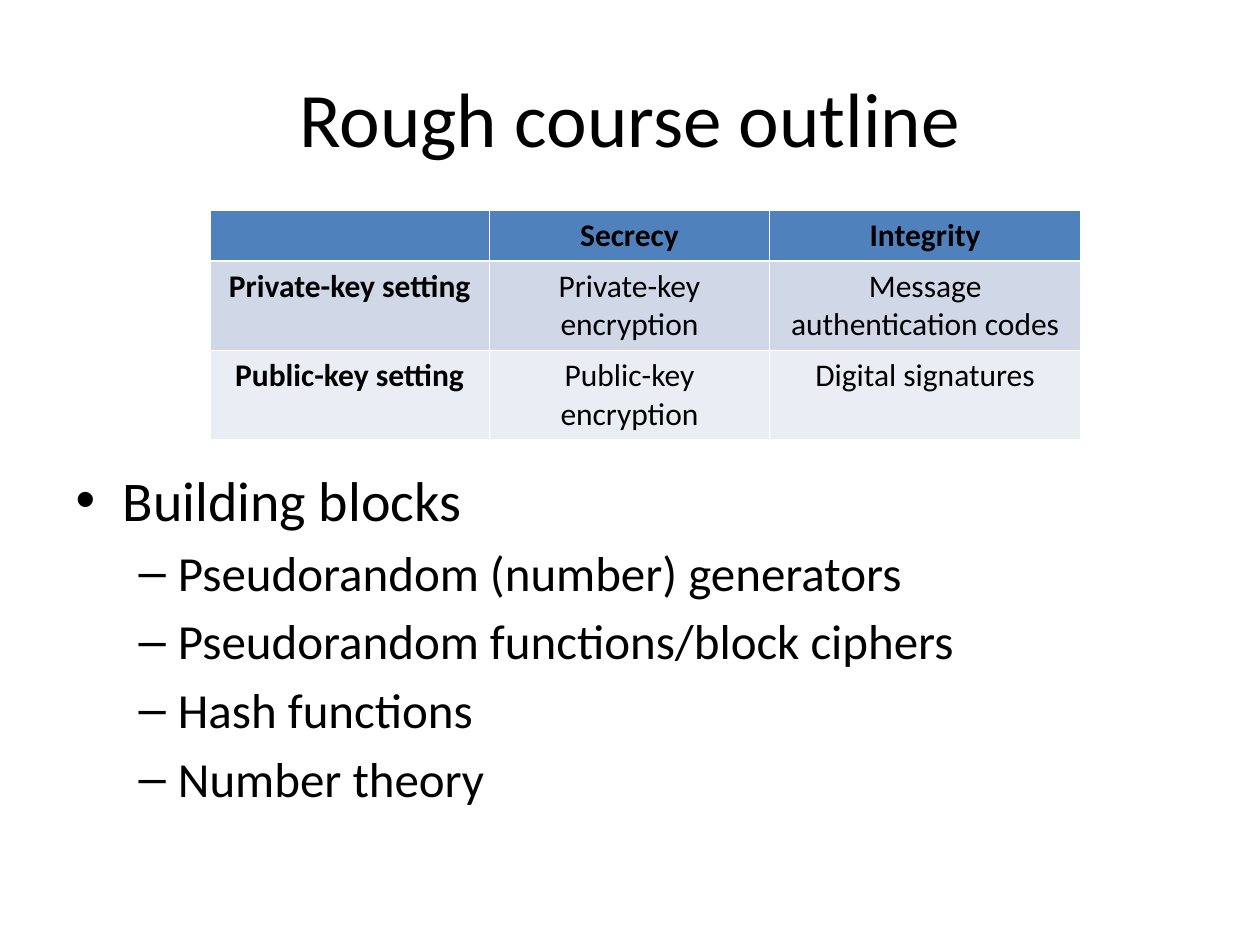
from pptx import Presentation
from pptx.dml.color import RGBColor
from pptx.enum.text import MSO_AUTO_SIZE as Fit, PP_ALIGN as Align
from pptx.util import Cm, Pt

BLACK = RGBColor(0x00, 0x00, 0x00)
BLUE = RGBColor(0x4F, 0x81, 0xBD)
MIST = RGBColor(0xD0, 0xD8, 0xE8)
PALE = RGBColor(0xE9, 0xED, 0xF4)

GRID = [
    ["", "Secrecy", "Integrity"],
    ["Private-key setting", "Private-key encryption", "Message authentication codes"],
    ["Public-key setting", "Public-key encryption", "Digital signatures"],
]
FILLS = [BLUE, MIST, PALE]
COLS = [5.64, 5.64, 6.28]
ROWS = [1.03, 1.78, 1.78]
BLOCKS = [
    ("Building blocks", 0),
    ("Pseudorandom (number) generators", 1),
    ("Pseudorandom functions/block ciphers", 1),
    ("Hash functions", 1),
    ("Number theory", 1),
]


def place(shape, left, top, width, height):
    shape.left, shape.top = Cm(left), Cm(top)
    shape.width, shape.height = Cm(width), Cm(height)


def style(para, size, bold=False):
    font = para.font
    font.name, font.size, font.bold = "Calibri", Pt(size), bold
    font.color.rgb = BLACK


def add_title(slide, text):
    title = slide.shapes.title
    place(title, 1.27, 0.76, 22.86, 3.18)
    title.text_frame.text = text
    para = title.text_frame.paragraphs[0]
    para.alignment = Align.CENTER
    style(para, 44)


def add_list(slide, items):
    body = slide.placeholders[1]
    place(body, 1.27, 9.25, 22.86, 7.77)
    frame = body.text_frame
    frame.auto_size = Fit.NONE
    frame.text = "\n".join(text for text, level in items)
    for para, (text, level) in zip(frame.paragraphs, items):
        para.level = level
        style(para, 28 if level else 32)


def add_grid(slide):
    table = slide.shapes.add_table(
        len(ROWS), len(COLS), Cm(4.23), Cm(4.23), Cm(sum(COLS)), Cm(sum(ROWS))
    ).table
    for col, width in zip(table.columns, COLS):
        col.width = Cm(width)
    for r, (row, height) in enumerate(zip(table.rows, ROWS)):
        row.height = Cm(height)
        for c, cell in enumerate(row.cells):
            cell.fill.solid()
            cell.fill.fore_color.rgb = FILLS[r]
            cell.text = GRID[r][c]
            para = cell.text_frame.paragraphs[0]
            para.alignment = Align.CENTER
            style(para, 18, bold=r == 0 or c == 0)


def main():
    deck = Presentation()
    deck.slide_width, deck.slide_height = Cm(25.4), Cm(19.05)
    slide = deck.slides.add_slide(deck.slide_layouts[1])
    add_title(slide, "Rough course outline")
    add_list(slide, BLOCKS)
    add_grid(slide)
    deck.save("out.pptx")


if __name__ == "__main__":
    main()
